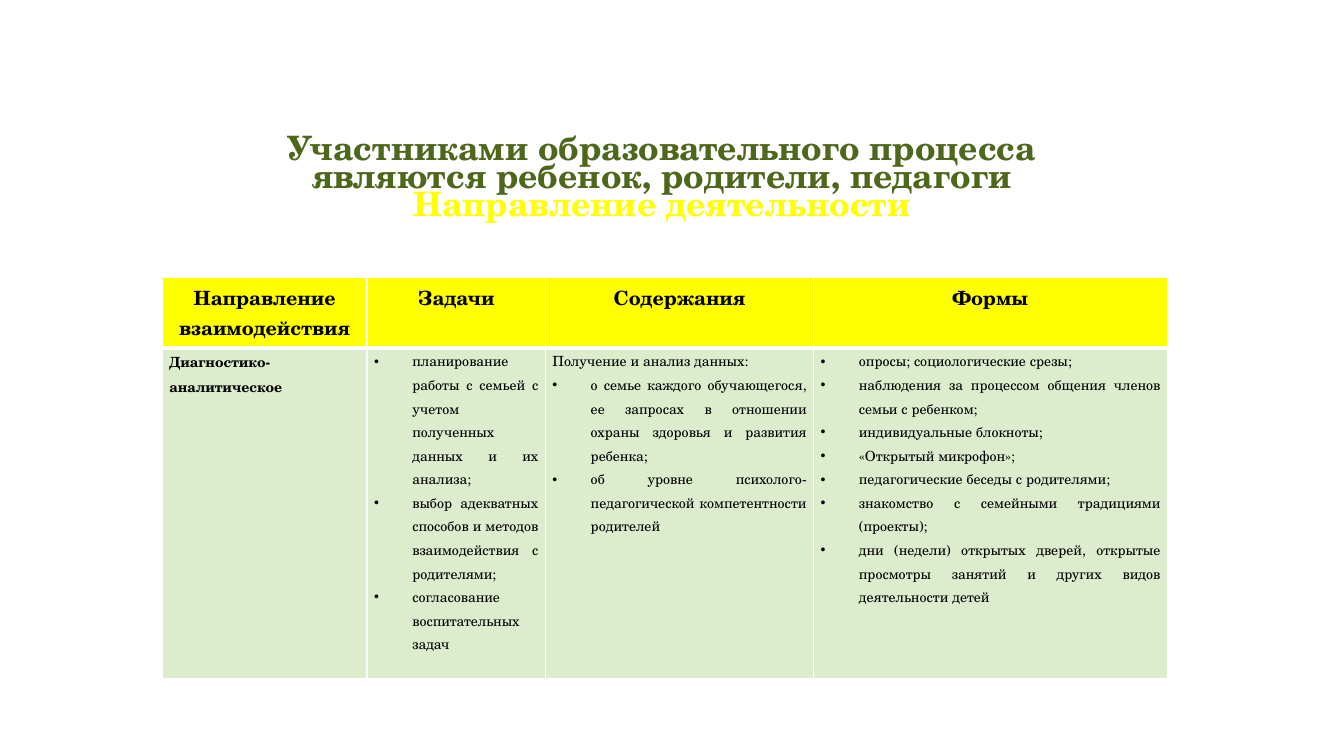
"""Build a slide on how teachers and families work together, with a table of tasks and forms."""
from lxml.etree import SubElement
from pptx import Presentation
from pptx.dml.color import RGBColor
from pptx.enum.text import MSO_ANCHOR, MSO_AUTO_SIZE, PP_ALIGN
from pptx.oxml.ns import qn
from pptx.util import Inches, Pt

FONT = "TeX Gyre Schola"
WHITE, BLACK, YELLOW = "FFFFFF", "000000", "FFFF00"
DARK_GREEN, PALE_GREEN = "4D671B", "DEECCE"


def style_font(font, color, **values):
    font.color.rgb = RGBColor.from_string(color)
    for name, value in {"name": FONT, **values}.items():
        setattr(font, name, value)


def style_cell(cell, fill, borders):
    properties = cell._tc.get_or_add_tcPr()
    for side, width in zip(("lnL", "lnR", "lnT", "lnB"), borders):
        line = SubElement(properties, qn(f"a:{side}"), w=str(Pt(width)))
        line_fill = SubElement(line, qn("a:solidFill"))
        SubElement(line_fill, qn("a:srgbClr"), val=WHITE)
    cell.fill.solid()
    cell.fill.fore_color.rgb = RGBColor.from_string(fill)


presentation = Presentation()
presentation.slide_width = Inches(13.33)
presentation.slide_height = Inches(7.5)
slide = presentation.slides.add_slide(presentation.slide_layouts[5])

heading = slide.shapes.title
heading_place = {"left": 2.03, "top": 1.06, "width": 9.07, "height": 1.45}
for name, value in heading_place.items():
    setattr(heading, name, Inches(value))
heading_frame = heading.text_frame
heading_format = {"word_wrap": True, "auto_size": MSO_AUTO_SIZE.NONE,
                  "vertical_anchor": MSO_ANCHOR.MIDDLE}
for name, value in heading_format.items():
    setattr(heading_frame, name, value)
heading_line = heading_frame.paragraphs[0]
heading_line.alignment = PP_ALIGN.CENTER
heading_line.line_spacing = 0.7
participants = heading_line.add_run()
participants.text = "Участниками образовательного процесса являются ребенок, родители, педагоги"
heading_line.add_line_break()
activity = heading_line.add_run()
activity.text = "Направление деятельности"
for part, color in ((participants, DARK_GREEN), (activity, YELLOW)):
    style_font(part.font, color, size=Pt(24), bold=True)

# Each column: width, header, unbulleted lead, bulleted items
columns = [
    (2.03, "Направление взаимодействия", "Диагностико-аналитическое", []),
    (1.77, "Задачи", "", [
        "планирование работы с семьей с учетом полученных данных и их анализа;",
        "выбор адекватных способов и методов взаимодействия с родителями;",
        "согласование воспитательных задач",
    ]),
    (2.66, "Содержания", "Получение и анализ данных:", [
        "о семье каждого обучающегося, ее запросах в отношении охраны здоровья и развития ребенка;",
        "об уровне психолого-педагогической компетентности родителей",
    ]),
    (3.51, "Формы", "", [
        "опросы; социологические срезы;",
        "наблюдения за процессом общения членов семьи с ребенком;",
        "индивидуальные блокноты;",
        "«Открытый микрофон»;",
        "педагогические беседы с родителями;",
        "знакомство с семейными традициями (проекты);",
        "дни (недели) открытых дверей, открытые просмотры занятий и других видов деятельности детей",
    ]),
]
row_heights = (0.7, 3.28)
body_margins = {"margin_left": 0.07, "margin_right": 0.07, "margin_top": 0, "margin_bottom": 0}

interaction = slide.shapes.add_table(
    2, len(columns), Inches(1.61), Inches(2.75), Inches(9.97), Inches(sum(row_heights))
).table
for row, height in zip(interaction.rows, row_heights):
    row.height = Inches(height)

for index, (width, header, lead, items) in enumerate(columns):
    interaction.columns[index].width = Inches(width)

    header_cell = interaction.cell(0, index)
    style_cell(header_cell, YELLOW, (1, 1, 1, 3))
    header_cell.text = header
    header_line = header_cell.text_frame.paragraphs[0]
    header_line.alignment = PP_ALIGN.CENTER
    style_font(header_line.runs[0].font, BLACK, size=Pt(14), bold=True)

    body_cell = interaction.cell(1, index)
    style_cell(body_cell, PALE_GREEN, (1, 1, 3, 1))
    for name, value in body_margins.items():
        setattr(body_cell, name, Inches(value))
    body_cell.text = "\n".join(([lead] if lead else []) + items)
    for position, paragraph in enumerate(body_cell.text_frame.paragraphs):
        if position or not lead:
            bullet_format = paragraph._p.get_or_add_pPr()
            bullet_format.set("marL", str(Inches(0.38)))
            bullet_format.set("indent", str(Inches(-0.38)))
            SubElement(bullet_format, qn("a:buFont"), typeface="Arial")
            SubElement(bullet_format, qn("a:buChar"), char="•")
        paragraph.alignment = PP_ALIGN.JUSTIFY
        paragraph.line_spacing = 1.15
        style_font(paragraph.runs[0].font, BLACK, size=Pt(10), bold=index == 0)

presentation.save("out.pptx")
